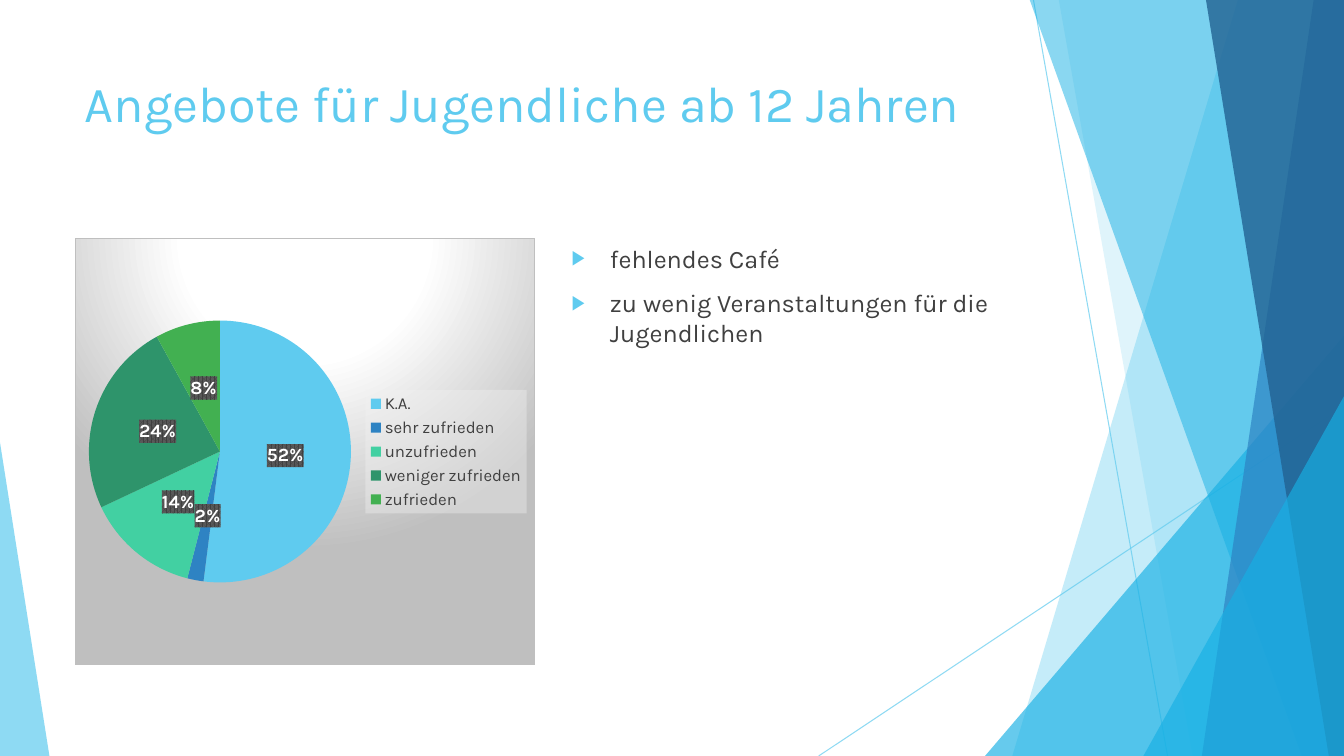
from lxml.etree import SubElement
from pptx import Presentation
from pptx.chart.data import CategoryChartData
from pptx.dml.color import RGBColor
from pptx.enum.chart import XL_CHART_TYPE as ChartType, XL_LABEL_POSITION as LabelPosition, XL_LEGEND_POSITION as LegendPosition
from pptx.enum.shapes import MSO_CONNECTOR as Connector, MSO_SHAPE as Shape
from pptx.enum.text import MSO_ANCHOR as Anchor, MSO_AUTO_SIZE as AutoSize, PP_ALIGN as Align
from pptx.oxml import parse_xml
from pptx.oxml.ns import nsdecls, qn
from pptx.util import Inches, Pt

COLORS = {
    "sky": "5FCBEF", "cyan": "17B0E4", "blue": "2E83C3", "navy": "226292",
    "mint": "42D0A2", "forest": "2E946B", "green": "42B051", "text": "404040",
    "label": "595959", "white": "FFFFFF", "pale": "F2F2F2", "gray": "BFBFBF",
}
WIDTH, HEIGHT = 13.33, 7.5


def rgb(color):
    return RGBColor.from_string(COLORS[color])


def style_font(font, size, color, bold=False):
    font.name, font.size, font.bold = "Karla", Pt(size), bold
    font.color.rgb = rgb(color)


def write_text(frame, lines, size, color, bullet=None, gap=0):
    frame.word_wrap, frame.auto_size = True, AutoSize.NONE
    frame.vertical_anchor = Anchor.TOP
    for index, line in enumerate(lines):
        paragraph = frame.add_paragraph() if index else frame.paragraphs[0]
        if bullet:
            add_bullet(paragraph, bullet)
        paragraph.alignment = Align.LEFT
        paragraph.space_before = Pt(gap if index else 0)
        run = paragraph.add_run()
        run.text = line
        style_font(run.font, size, color)


def add_bullet(paragraph, character):
    properties = paragraph._p.get_or_add_pPr()
    properties.set("marL", str(Inches(0.38)))
    properties.set("indent", str(Inches(-0.38)))
    bullet_color = SubElement(properties, qn("a:buClr"))
    SubElement(bullet_color, qn("a:srgbClr"), val=COLORS["sky"])
    SubElement(properties, qn("a:buSzPct"), val="80000")
    SubElement(properties, qn("a:buChar"), char=character)


def set_alpha(element, percent):
    for color in element.iter(qn("a:srgbClr")):
        SubElement(color, qn("a:alpha"), val=str(percent * 1000))


def color_xml(color, inner=""):
    return f'<a:srgbClr val="{COLORS[color]}">{inner}</a:srgbClr>'


def set_background(element, fill):
    properties = parse_xml(f'<c:spPr {nsdecls("c", "a")}>{fill}</c:spPr>')
    element.find(qn("c:txPr")).addprevious(properties)


def set_layout(element, x, y, w, h):
    old = element.find(qn("c:layout"))
    if old is not None:
        element.remove(old)
    values = "".join(f'<c:{key} val="{value}"/>' for key, value in zip("xywh", (x, y, w, h)))
    element.insert(0, parse_xml(
        f'<c:layout {nsdecls("c")}><c:manualLayout><c:layoutTarget val="inner"/>'
        f'<c:xMode val="edge"/><c:yMode val="edge"/>{values}</c:manualLayout></c:layout>'))


class SlideBuilder:
    def __init__(self, presentation):
        self.slide = presentation.slides.add_slide(presentation.slide_layouts[1])
        self.shapes = self.slide.shapes

    def ray(self, x1, y1, x2, y2):
        ray = self.shapes.add_connector(Connector.STRAIGHT, *map(Inches, (x1, y1, x2, y2)))
        ray.line.color.rgb, ray.line.width = rgb("sky"), Pt(0.75)
        properties = ray.element.spPr
        set_alpha(properties, 70)
        SubElement(properties, qn("a:effectLst"))

    def tint(self, shape, color, alpha):
        shape.shadow.inherit = False
        shape.fill.solid()
        shape.fill.fore_color.rgb = rgb(color)
        shape.line.fill.background()
        set_alpha(shape.element.spPr, alpha)

    def band(self, top_x, bottom_x, color, alpha):
        top = Inches(-0.01)
        outline = self.shapes.build_freeform(Inches(top_x), top)
        outline.add_line_segments([
            (Inches(WIDTH), top), (Inches(WIDTH), Inches(HEIGHT)),
            (Inches(bottom_x), Inches(HEIGHT))])
        self.tint(outline.convert_to_shape(), color, alpha)

    def triangle(self, x, y, width, apex, color, alpha):
        triangle = self.shapes.add_shape(
            Shape.ISOSCELES_TRIANGLE, *map(Inches, (x, y, width, HEIGHT - y)))
        triangle.adjustments[0] = apex
        self.tint(triangle, color, alpha)

    def placeholder(self, index, box, lines, **text_format):
        holder = self.slide.placeholders[index]
        holder.left, holder.top, holder.width, holder.height = map(Inches, box)
        write_text(holder.text_frame, lines, **text_format)

    def pie(self, box, ratings):
        data = CategoryChartData()
        data.categories = [name for name, _, _ in ratings]
        data.add_series("Series 1", [value for _, value, _ in ratings])
        chart = self.shapes.add_chart(ChartType.PIE, *map(Inches, box), data).chart
        chart.has_title = False
        style_font(chart.font, 10, "text")
        chart.has_legend = True
        chart.legend.position = LegendPosition.RIGHT
        chart.legend.include_in_layout = False
        style_font(chart.legend.font, 12, "text")

        plot = chart.plots[0]
        plot.vary_by_categories = True
        for index, (_, _, color) in enumerate(ratings):
            fill = plot.series[0].points[index].format.fill
            fill.solid()
            fill.fore_color.rgb = rgb(color)
        plot.has_data_labels = True
        labels = plot.data_labels
        labels.show_percentage, labels.show_value = True, False
        labels.number_format, labels.number_format_is_linked = "0%", False
        labels.position = LabelPosition.CENTER
        style_font(labels.font, 13.3, "white", bold=True)

        root = chart.element
        stops = "".join(f'<a:gs pos="{position * 1000}">{color_xml(color)}</a:gs>'
                        for position, color in ((0, "white"), (39, "white"), (100, "gray")))
        set_background(root, (
            f'<a:gradFill><a:gsLst>{stops}</a:gsLst><a:path path="circle">'
            '<a:fillToRect l="50000" t="-80000" r="50000" b="180000"/></a:path></a:gradFill>'
            f'<a:ln w="9525"><a:solidFill>{color_xml("gray")}</a:solidFill></a:ln>'))
        legend_color = color_xml("pale", '<a:alpha val="39000"/>')
        set_background(root.find(".//" + qn("c:legend")),
                       f'<a:solidFill>{legend_color}</a:solidFill>')
        set_background(root.find(".//" + qn("c:dLbls")), (
            f'<a:pattFill prst="pct75"><a:fgClr>{color_xml("text")}</a:fgClr>'
            f'<a:bgClr>{color_xml("label")}</a:bgClr></a:pattFill>'))
        set_layout(root.find(".//" + qn("c:plotArea")), 0.03, 0.19, 0.57, 0.62)


def main():
    presentation = Presentation()
    presentation.slide_width, presentation.slide_height = Inches(WIDTH), Inches(HEIGHT)
    builder = SlideBuilder(presentation)

    builder.ray(10.25, 0, 11.58, HEIGHT)
    builder.ray(WIDTH, 4.03, 8.12, HEIGHT)
    builder.band(12.28, 10.04, "sky", 36)
    builder.band(10.5, 11.83, "sky", 20)
    builder.triangle(9.77, 3.33, 3.56, 1, "cyan", 66)
    builder.band(10.21, 12.91, "cyan", 50)
    builder.band(13.03, 11.92, "blue", 70)
    builder.band(11.96, 13.18, "navy", 80)
    builder.triangle(11.34, 3.93, 1.99, 1, "cyan", 66)
    builder.triangle(0, 4.39, 0.49, 0, "sky", 70)

    builder.placeholder(0, (0.74, 0.67, 9.4, 1.44),
                        ["Angebote für Jugendliche ab 12 Jahren"], size=36, color="sky")
    builder.placeholder(1, (5.57, 2.36, 4.58, 4.24),
                        ["fehlendes Café", "zu wenig Veranstaltungen für die Jugendlichen"],
                        size=18, color="text", bullet="▶", gap=10)
    builder.pie((0.74, 2.36, 4.57, 4.24), [
        ("K.A.", 52, "sky"),
        ("sehr zufrieden", 2, "blue"),
        ("unzufrieden", 14, "mint"),
        ("weniger zufrieden", 24, "forest"),
        ("zufrieden", 8, "green"),
    ])
    presentation.save("out.pptx")


if __name__ == "__main__":
    main()
